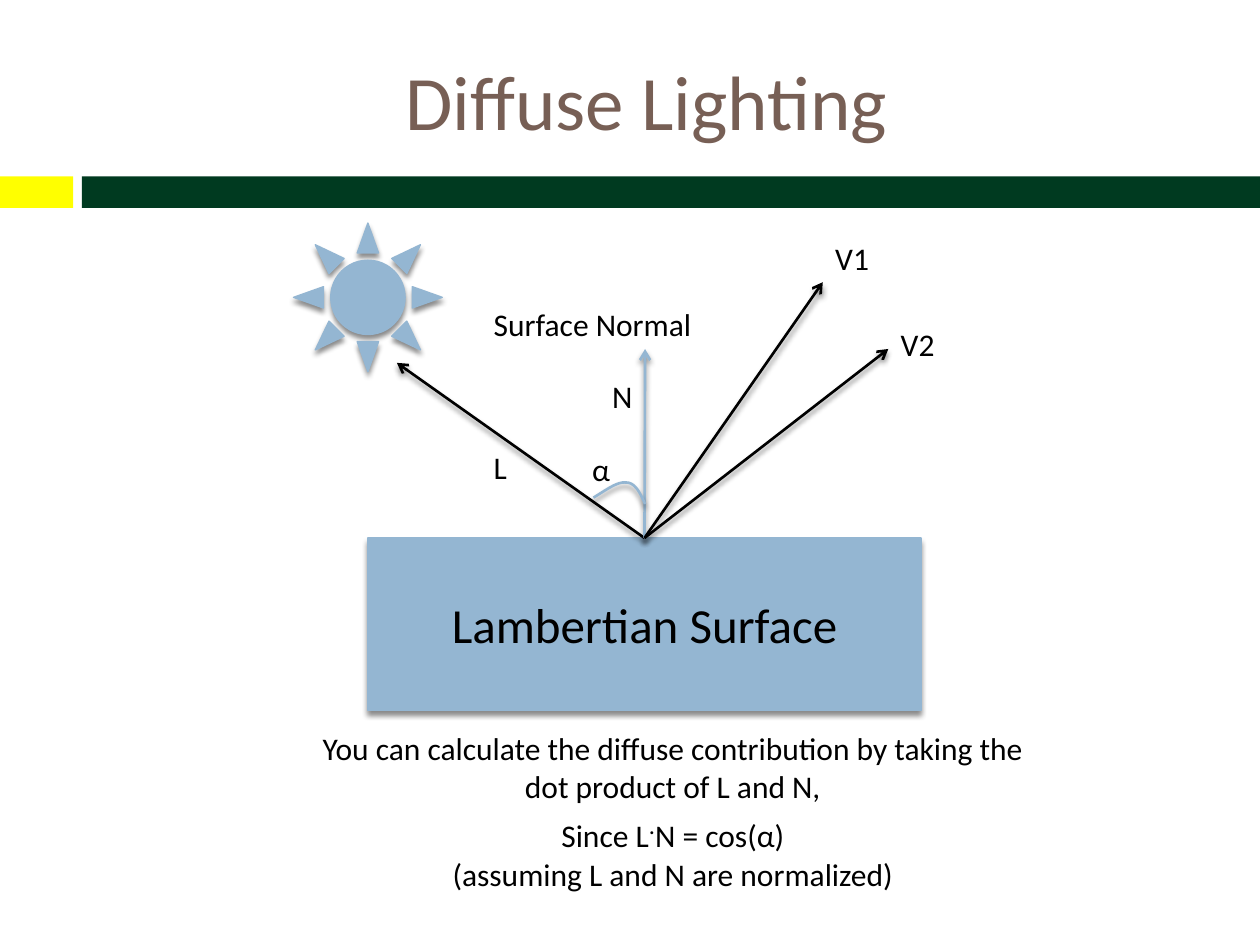
from lxml import etree
from pptx import Presentation
from pptx import util as u
from pptx.dml.color import RGBColor
from pptx.enum import shapes, text
from pptx.oxml import ns

YELLOW = RGBColor(0xFF, 0xFF, 0x00)
GREEN = RGBColor(0x00, 0x3A, 0x20)
BROWN = RGBColor(0x77, 0x5F, 0x55)
BLUE = RGBColor(0x94, 0xB6, 0xD2)
BLACK = RGBColor(0, 0, 0)
COLUMNS, ROWS = 100, 75
LEFT, CENTER = text.PP_ALIGN.LEFT, text.PP_ALIGN.CENTER


def bezier(start, first, second, end, steps=16):
    for step in range(1, steps + 1):
        t = step / steps
        weights = ((1 - t) ** 3, 3 * t * (1 - t) ** 2, 3 * t ** 2 * (1 - t), t ** 3)
        yield tuple(sum(w * p[axis] for w, p in zip(weights, (start, first, second, end)))
                    for axis in (0, 1))


class Diagram:
    font = "Calibri"
    size = 18

    def __init__(self, deck):
        self.unit_x = deck.slide_width / COLUMNS
        self.unit_y = deck.slide_height / ROWS
        self.slide = deck.slides.add_slide(deck.slide_layouts[6])

    def place(self, column, row):
        return round(column * self.unit_x), round(row * self.unit_y)

    def box(self, column, row, columns, rows):
        return self.place(column, row) + self.place(columns, rows)

    def add_shadow(self, shape):
        properties = shape._element.spPr
        effects = properties.find(ns.qn("a:effectLst"))
        if effects is None:
            effects = etree.SubElement(properties, ns.qn("a:effectLst"))
        shadow = etree.SubElement(effects, ns.qn("a:outerShdw"), blurRad=str(u.Pt(3)),
                                  dist=str(u.Pt(2.4)), dir="5400000", rotWithShape="0")
        tint = etree.SubElement(shadow, ns.qn("a:srgbClr"), val=str(BLACK))
        etree.SubElement(tint, ns.qn("a:alpha"), val="45000")

    def style(self, paragraph, size, color, align):
        paragraph.alignment = align
        for run in paragraph.runs:
            run.font.name = self.font
            run.font.size = u.Pt(size)
            run.font.color.rgb = color

    def block(self, kind, area, color, raised=False):
        shape = self.slide.shapes.add_shape(kind, *self.box(*area))
        shape.shadow.inherit = False
        shape.fill.solid()
        shape.fill.fore_color.rgb = color
        if raised:
            shape.line.color.rgb = color
            shape.line.width = u.Pt(0.79)
            self.add_shadow(shape)
        else:
            shape.line.fill.background()
        return shape

    def caption(self, shape, words, size, color=BLACK):
        frame = shape.text_frame
        frame.word_wrap = True
        frame.vertical_anchor = text.MSO_ANCHOR.MIDDLE
        frame.text = words
        self.style(frame.paragraphs[0], size, color, CENTER)

    def textbox(self, area):
        return self.slide.shapes.add_textbox(*self.box(*area))

    def label(self, words, column, row, columns, wrap=False):
        frame = self.textbox((column, row, columns, 4)).text_frame
        frame.word_wrap = wrap
        frame.auto_size = text.MSO_AUTO_SIZE.SHAPE_TO_FIT_TEXT
        frame.text = words
        self.style(frame.paragraphs[0], self.size, BLACK, LEFT)

    def explanation(self, area, lines):
        frame = self.textbox(area).text_frame
        frame.word_wrap = True
        frame.auto_size = text.MSO_AUTO_SIZE.SHAPE_TO_FIT_TEXT
        for index, parts in enumerate(lines):
            paragraph = frame.paragraphs[0] if index == 0 else frame.add_paragraph()
            for part in parts:
                paragraph.add_run().text = part
            self.style(paragraph, self.size, BLACK, CENTER)
            for run in paragraph.runs:
                if run.text == ".":
                    run.font.size = u.Pt(24)
                    run._r.get_or_add_rPr().set("baseline", "30000")

    def vector(self, surface, tip, color=BLACK):
        line = self.slide.shapes.add_connector(
            shapes.MSO_CONNECTOR.STRAIGHT, 0, 0, *self.place(*tip))
        line.begin_connect(surface, 0)
        line.line.color.rgb = color
        line.line.width = u.Pt(1.5)
        etree.SubElement(line.line._get_or_add_ln(), ns.qn("a:tailEnd"), type="arrow")
        self.add_shadow(line)

    def arc(self, start, *curves):
        builder = self.slide.shapes.build_freeform(*self.place(*start), scale=1.0)
        for curve in curves:
            points = [self.place(*point) for point in bezier(start, *curve)]
            builder.add_line_segments(points, close=False)
            start = curve[-1]
        shape = builder.convert_to_shape()
        shape.shadow.inherit = False
        shape.fill.background()
        shape.line.color.rgb = BLUE
        shape.line.width = u.Pt(1.5)
        self.add_shadow(shape)


def main():
    deck = Presentation()
    deck.slide_width, deck.slide_height = u.Inches(10), u.Inches(7.5)
    diagram = Diagram(deck)
    rectangle = shapes.MSO_SHAPE.RECTANGLE

    diagram.block(rectangle, (0, 14, 5.8, 2.5), YELLOW)
    diagram.block(rectangle, (6.5, 14, 93.5, 2.5), GREEN)
    diagram.caption(diagram.textbox((6.7, 2.5, 89.2, 10.8)), "Diffuse Lighting", 44, BROWN)

    surface = diagram.block(rectangle, (29.2, 42.7, 43.9, 13.7), BLUE, raised=True)
    diagram.caption(surface, "Lambertian Surface", 28)
    diagram.block(shapes.MSO_SHAPE.SUN, (23.3, 17.7, 11.8, 11.8), BLUE, raised=True)

    diagram.vector(surface, (31.5, 28.8))
    diagram.vector(surface, (51.2, 27.7), BLUE)
    diagram.label("Surface Normal", 38.2, 23.7, 19.6)
    diagram.explanation((23.5, 57.4, 59.8, 13.1), [
        ["You can calculate the diffuse contribution by taking the dot product of L and N,"],
        ["Since L", ".", "N = cos(α)"],
        ["(assuming L and N are normalized)"],
    ])
    diagram.label("N", 47.6, 29.4, 3.8)
    diagram.label("L", 38.2, 35.1, 3.3)
    diagram.label("α", 46, 35.2, 3.5)
    diagram.arc((47.1, 39.5),
                ((48.1, 38.9), (49, 38.2), (49.7, 38.3)),
                ((50.4, 38.3), (50.8, 39.1), (51.2, 40)))

    for name, tip, row in (("V1", (65.3, 22.4), 18.5), ("V2", (70.5, 27.7), 25.3)):
        diagram.vector(surface, tip)
        diagram.label(name, tip[0], row, 5.2)

    deck.save("out.pptx")


if __name__ == "__main__":
    main()
